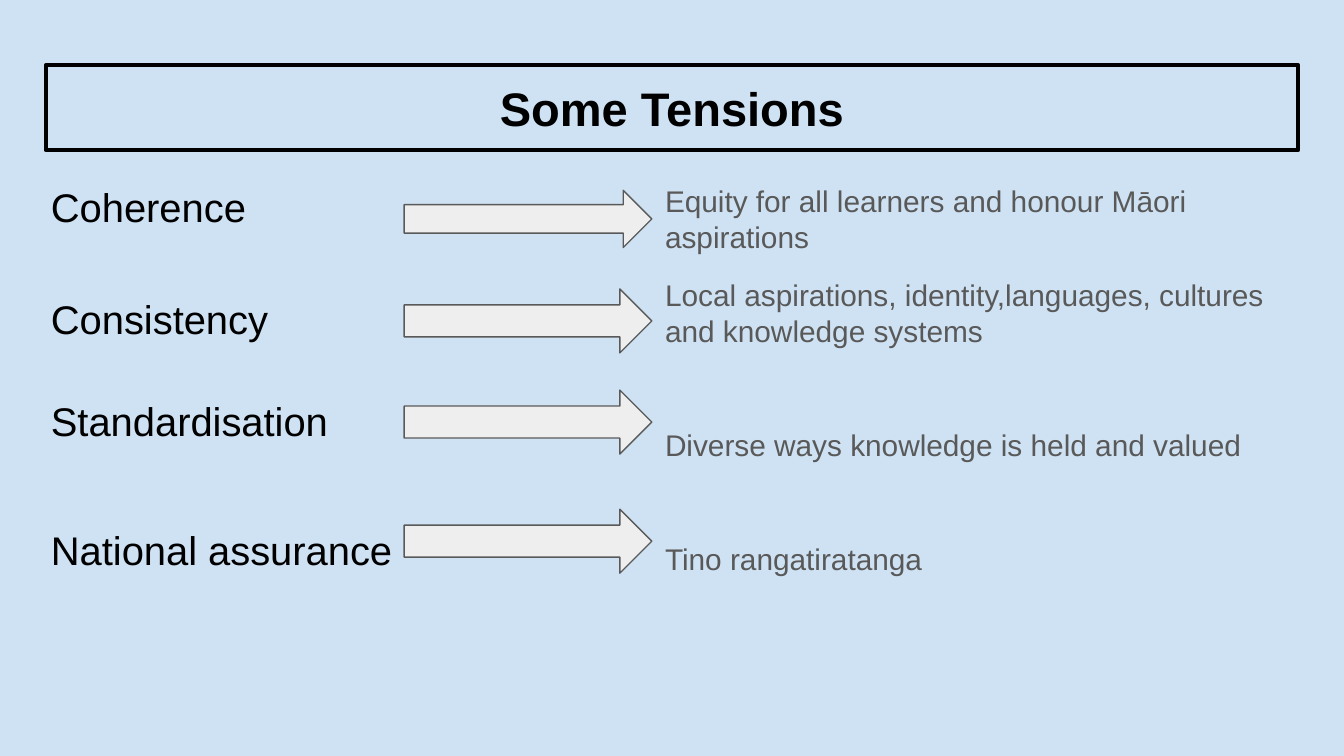
from pptx import Presentation
from pptx.dml.color import RGBColor
from pptx.enum.shapes import MSO_SHAPE
from pptx.enum.text import MSO_ANCHOR, PP_ALIGN
from pptx.util import Pt


def color(hex_code):
    return RGBColor.from_string(hex_code)


class TensionsSlide:
    FONT = "Arial"
    BACKGROUND, INK, GREY, ARROW = "CFE2F3", "000000", "595959", "EEEEEE"
    INSET = 7.2

    def __init__(self, deck):
        self.slide = deck.slides.add_slide(deck.slide_layouts[5])
        fill = self.slide.background.fill
        fill.solid()
        fill.fore_color.rgb = color(self.BACKGROUND)

    def place(self, shape, left, top, width, height):
        shape.left, shape.top = Pt(left), Pt(top)
        shape.width, shape.height = Pt(width), Pt(height)

    def frame(self, shape, anchor):
        frame = shape.text_frame
        frame.word_wrap = True
        frame.vertical_anchor = anchor
        frame.margin_left = frame.margin_right = Pt(self.INSET)
        frame.margin_top = frame.margin_bottom = Pt(self.INSET)
        return frame

    def style(self, paragraph, size, ink, bold=False):
        font = paragraph.font
        font.name, font.size, font.bold = self.FONT, Pt(size), bold
        font.color.rgb = color(ink)

    def title(self, text, *box):
        title = self.slide.shapes.title
        self.place(title, *box)
        title.line.color.rgb = color(self.INK)
        title.line.width = Pt(2.25)
        heading = self.frame(title, MSO_ANCHOR.MIDDLE).paragraphs[0]
        heading.text = text
        heading.alignment = PP_ALIGN.CENTER
        self.style(heading, 25.2, self.INK, bold=True)

    def column(self, entries, size, ink, *box):
        """Stack (text, space before) entries in one text box."""
        column = self.slide.shapes.add_textbox(*map(Pt, box))
        frame = self.frame(column, MSO_ANCHOR.TOP)
        for index, (text, gap) in enumerate(entries):
            entry = frame.add_paragraph() if index else frame.paragraphs[0]
            entry.text = text
            entry.line_spacing = 1.0
            if gap:
                entry.space_before = Pt(gap)
            self.style(entry, size, ink)

    def arrow(self, *box):
        arrow = self.slide.shapes.add_shape(MSO_SHAPE.RIGHT_ARROW, *map(Pt, box))
        arrow.shadow.inherit = False
        arrow.fill.solid()
        arrow.fill.fore_color.rgb = color(self.ARROW)
        arrow.line.color.rgb = color(self.GREY)
        arrow.line.width = Pt(0.75)


def main():
    deck = Presentation()
    deck.slide_width, deck.slide_height = Pt(720), Pt(405)
    tensions = TensionsSlide(deck)

    # Title
    tensions.title("Some Tensions", 24.5, 35, 671, 45.4)

    # National aims
    aims = [
        ("Coherence", 0),
        ("Consistency", 34.3),
        ("Standardisation", 29),
        ("National assurance", 43.4),
    ]
    tensions.column(aims, 21.4, tensions.INK, 20.2, 90.7, 340, 307.4)

    # Local aspirations that pull against them
    aspirations = [
        ("Equity for all learners and honour Māori aspirations", 0),
        ("Local aspirations, identity,languages, cultures and knowledge systems", 12),
        ("Diverse ways knowledge is held and valued", 42),
        ("Tino rangatiratanga", 42),
    ]
    tensions.column(aspirations, 16, tensions.GREY, 349.2, 90.7, 352, 294.5)

    # Arrows from aim to aspiration
    for top, height in [(102, 30.6), (154.8, 34.3), (209, 34.3), (272.8, 34.3)]:
        tensions.arrow(216.5, top, 132.7, height)

    deck.save("out.pptx")


if __name__ == "__main__":
    main()
